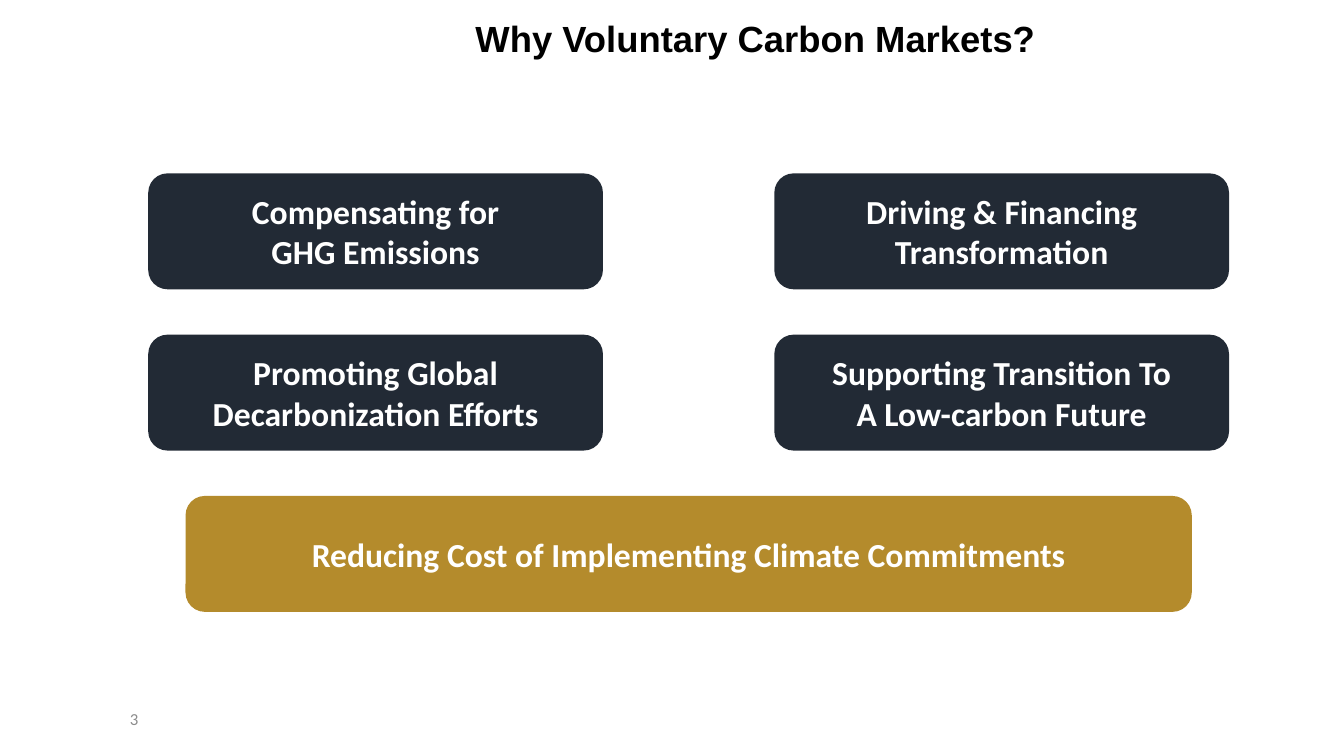
import pptx
import pptx.util
import pptx.dml.color
import pptx.enum.shapes
import pptx.enum.text

Inches = pptx.util.Inches
RGBColor = pptx.dml.color.RGBColor
Align = pptx.enum.text.PP_ALIGN
Anchor = pptx.enum.text.MSO_ANCHOR

# Content
TITLE = "Why Voluntary Carbon Markets?"
PAGE_NUMBER = "3"
REASONS = [  # rows of the grid, each with a left and a right reason
    [["Compensating for", "GHG Emissions"], ["Driving & Financing Transformation"]],
    [["Promoting Global Decarbonization Efforts"],
     ["Supporting Transition To", "A Low-carbon Future"]],
]
CONCLUSION = ["Reducing Cost of Implementing Climate Commitments"]

NAVY = RGBColor(0x22, 0x2A, 0x35)
GOLD = RGBColor(0xB4, 0x8B, 0x2C)
WHITE = RGBColor(0xFF, 0xFF, 0xFF)
BLACK = RGBColor(0x00, 0x00, 0x00)
GREY = RGBColor(0x8C, 0x8C, 0x8C)

# Grid, in inches
SLIDE_WIDTH, SLIDE_HEIGHT = 13.33, 7.5
GRID_LEFT, GRID_TOP = 1.47, 1.72
COLUMN_STEP, ROW_STEP = 6.21, 1.6
CARD_WIDTH, CARD_HEIGHT = 4.51, 1.15
BAR_WIDTH = 9.98
GRID_WIDTH = COLUMN_STEP + CARD_WIDTH


def write(box, lines, size, font, color, align, anchor, bold=True):
    frame = box.text_frame
    frame.word_wrap = True
    frame.vertical_anchor = anchor
    frame.text = "\n".join(lines)
    for para in frame.paragraphs:
        para.alignment = align
        for span in para.runs:
            span.font.size = pptx.util.Pt(size)
            span.font.name = font
            span.font.bold = bold
            span.font.color.rgb = color


def add_label(page, text, left, top, width, height, *style):
    box = page.shapes.add_textbox(*map(Inches, (left, top, width, height)))
    write(box, [text], *style)


def add_card(page, lines, left, row, width, fill):
    top = GRID_TOP + row * ROW_STEP
    card = page.shapes.add_shape(
        pptx.enum.shapes.MSO_SHAPE.ROUNDED_RECTANGLE,
        *map(Inches, (left, top, width, CARD_HEIGHT)))
    card.shadow.inherit = False
    card.fill.solid()
    card.fill.fore_color.rgb = fill
    card.line.fill.background()
    write(card, lines, 24, "Calibri", WHITE, Align.CENTER, Anchor.MIDDLE)


def main():
    deck = pptx.Presentation()
    deck.slide_width = Inches(SLIDE_WIDTH)
    deck.slide_height = Inches(SLIDE_HEIGHT)
    page = deck.slides.add_slide(deck.slide_layouts[6])

    # Page number, right-aligned to the grid's left edge
    add_label(page, PAGE_NUMBER, 0, 6.93, GRID_LEFT, 0.4,
              12, "Calibri", GREY, Align.RIGHT, Anchor.MIDDLE, False)

    # Reasons in two columns
    for row, reasons in enumerate(REASONS):
        for column, lines in enumerate(reasons):
            add_card(page, lines, GRID_LEFT + column * COLUMN_STEP, row, CARD_WIDTH, NAVY)

    # Conclusion bar, centred below the grid
    bar_left = GRID_LEFT + (GRID_WIDTH - BAR_WIDTH) / 2
    add_card(page, CONCLUSION, bar_left, len(REASONS), BAR_WIDTH, GOLD)

    # Title
    add_label(page, TITLE, 3.85, 0.11, 7.29, 0.54,
              26, "Arial", BLACK, Align.CENTER, Anchor.TOP)

    deck.save("out.pptx")


if __name__ == "__main__":
    main()
